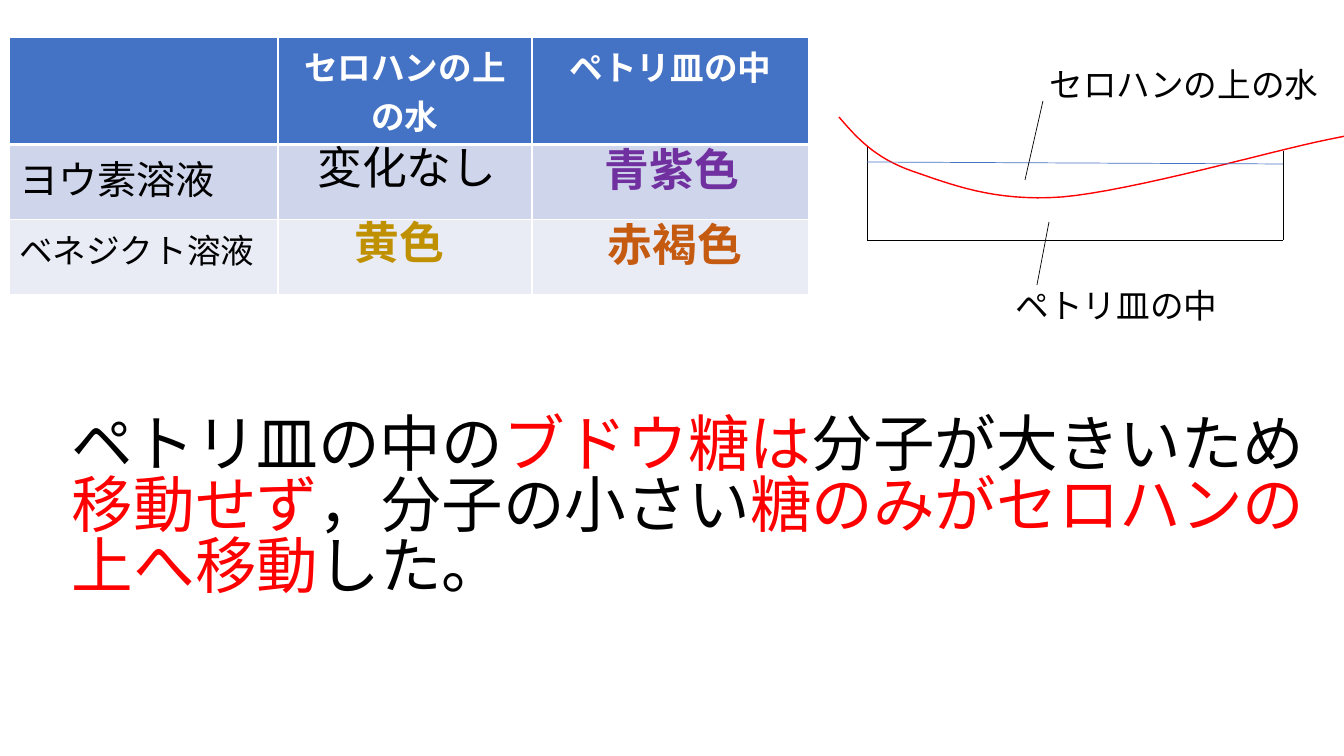
import pptx
import pptx.dml.color
import pptx.enum.shapes
import pptx.enum.text
import pptx.oxml.ns
import pptx.util
from lxml import etree

COLORS = {
    "black": "000000", "white": "FFFFFF", "red": "FF0000", "blue": "4472C4",
    "band": "CFD5EA", "pale": "E9EBF5", "purple": "7030A0",
    "brown": "C55A11", "gold": "BF9000",
}
PX = 12192000 / 1344
CENTER = pptx.enum.text.PP_ALIGN.CENTER
LEFT = pptx.enum.text.PP_ALIGN.LEFT
qn = pptx.oxml.ns.qn


def emu(px):
    return pptx.util.Emu(round(px * PX))


def color(name):
    return pptx.dml.color.RGBColor.from_string(COLORS[name])


def write(para, text, font="Noto Sans CJK JP", size=24, ink="black", bold=False):
    span = para.add_run()
    span.text = text
    span.font.name = font
    span.font.size = pptx.util.Pt(size)
    span.font.bold = bold
    span.font.color.rgb = color(ink)
    etree.SubElement(span.font._element, qn("a:ea"), typeface=font)


def bezier(start, first, second, end, steps=16):
    """Points along a cubic curve, without its start."""
    for step in range(1, steps + 1):
        t = step / steps
        weights = ((1 - t) ** 3, 3 * t * (1 - t) ** 2, 3 * t * t * (1 - t), t ** 3)
        yield tuple(sum(w * p[axis] for w, p in zip(weights, (start, first, second, end)))
                    for axis in (0, 1))


class Slide:
    def __init__(self, page):
        self.page = page

    def text(self, left, top, width, height, spans, align=CENTER, spacing=None, **style):
        """Place a text box; spans are pairs of text and colour."""
        box = self.page.shapes.add_textbox(*map(emu, (left, top, width, height)))
        frame = box.text_frame
        frame.word_wrap = True
        frame.vertical_anchor = pptx.enum.text.MSO_ANCHOR.MIDDLE
        para = frame.paragraphs[0]
        para.alignment = align
        para.line_spacing = spacing
        for text, ink in spans:
            write(para, text, ink=ink, **style)

    def line(self, *ends, ink="black"):
        straight = pptx.enum.shapes.MSO_CONNECTOR.STRAIGHT
        link = self.page.shapes.add_connector(straight, *map(emu, ends))
        link.line.color.rgb = color(ink)
        link.line.width = pptx.util.Pt(0.5)
        etree.SubElement(link._element.spPr, qn("a:effectLst"))

    def curve(self, start, pieces, ink):
        points = []
        here = start
        for piece in pieces:
            points += bezier(here, *piece)
            here = piece[-1]
        builder = self.page.shapes.build_freeform(*map(emu, start))
        builder.add_line_segments([tuple(map(emu, point)) for point in points], close=False)
        shape = builder.convert_to_shape()
        shape.shadow.inherit = False
        shape.fill.background()
        shape.line.color.rgb = color(ink)
        shape.line.width = pptx.util.Pt(1)

    def border(self, cell, side, points):
        edge = etree.SubElement(cell._tc.get_or_add_tcPr(), qn("a:ln" + side),
                                w=str(pptx.util.Pt(points)))
        fill = etree.SubElement(edge, qn("a:solidFill"))
        etree.SubElement(fill, qn("a:srgbClr"), val=COLORS["white"])

    def table(self, left, top, widths, row_height, rows, fills, sizes):
        frame = self.page.shapes.add_table(
            len(rows), len(widths),
            *map(emu, (left, top, sum(widths), row_height * len(rows))))
        grid = frame.table
        for column, width in zip(grid.columns, widths):
            column.width = emu(width)
        for r, row in enumerate(rows):
            grid.rows[r].height = emu(row_height)
            header = r == 0
            for c, text in enumerate(row):
                cell = grid.cell(r, c)
                for side in "LRTB":
                    below_header = (r, side) in ((0, "B"), (1, "T"))
                    self.border(cell, side, 3 if below_header else 1)
                cell.fill.solid()
                cell.fill.fore_color.rgb = color(fills[r])
                if text:
                    para = cell.text_frame.paragraphs[0]
                    para.alignment = CENTER if header else LEFT
                    write(para, text, size=sizes[r], bold=header,
                          ink="white" if header else "black")


def main():
    deck = pptx.Presentation()
    deck.slide_width, deck.slide_height = emu(1344), emu(756)
    slide = Slide(deck.slides.add_slide(deck.slide_layouts[6]))

    slide.table(
        9, 37, (269, 254, 277), 75,
        (("", "セロハンの上の水", "ペトリ皿の中"),
         ("ヨウ素溶液", "", ""),
         ("ベネジクト溶液", "", "")),
        fills=("blue", "band", "pale"), sizes=(24, 28, 24))

    for place, text, ink in (
            ((582, 142, 180, 54), "青紫色", "purple"),
            ((558, 205, 234, 78), "赤褐色", "brown"),
            ((301, 127, 212, 80), "変化なし", "black"),
            ((341, 208, 117, 68), "黄色", "gold")):
        slide.text(*place, [(text, ink)], size=32, bold=ink != "black")

    dish_left, dish_right, dish_bottom = 867, 1283, 240
    slide.line(dish_left, 146, dish_left, dish_bottom)
    slide.line(dish_left, dish_bottom, dish_right, dish_bottom)
    slide.line(dish_right, dish_bottom, dish_right, 151)
    slide.curve((839, 117), (
        ((857, 138), (875, 158), (912, 171)),
        ((950, 184), (994, 202), (1062, 197)),
        ((1132, 191), (1276, 150), (1326, 140)),
        ((1375, 130), (1367, 132), (1359, 134))), ink="red")
    slide.line(dish_left, 162, dish_right, 164, ink="blue")

    slide.line(1025, 180, 1043, 101)
    slide.text(995, 47, 378, 75, [("セロハンの上の水", "black")])
    slide.line(1049, 222, 1037, 285)
    slide.text(967, 265, 299, 80, [("ペトリ皿の中", "black")])

    slide.text(
        62, 341, 1264, 336,
        [("ペトリ皿の中の", "black"), ("ブドウ糖は", "red"),
         ("分子が大きいため", "black"), ("移動せず", "red"),
         ("，分子の小さい", "black"), ("糖のみがセロハンの上へ移動", "red"),
         ("した。", "black")],
        align=LEFT, spacing=0.83, size=44)

    deck.save("out.pptx")


if __name__ == "__main__":
    main()
